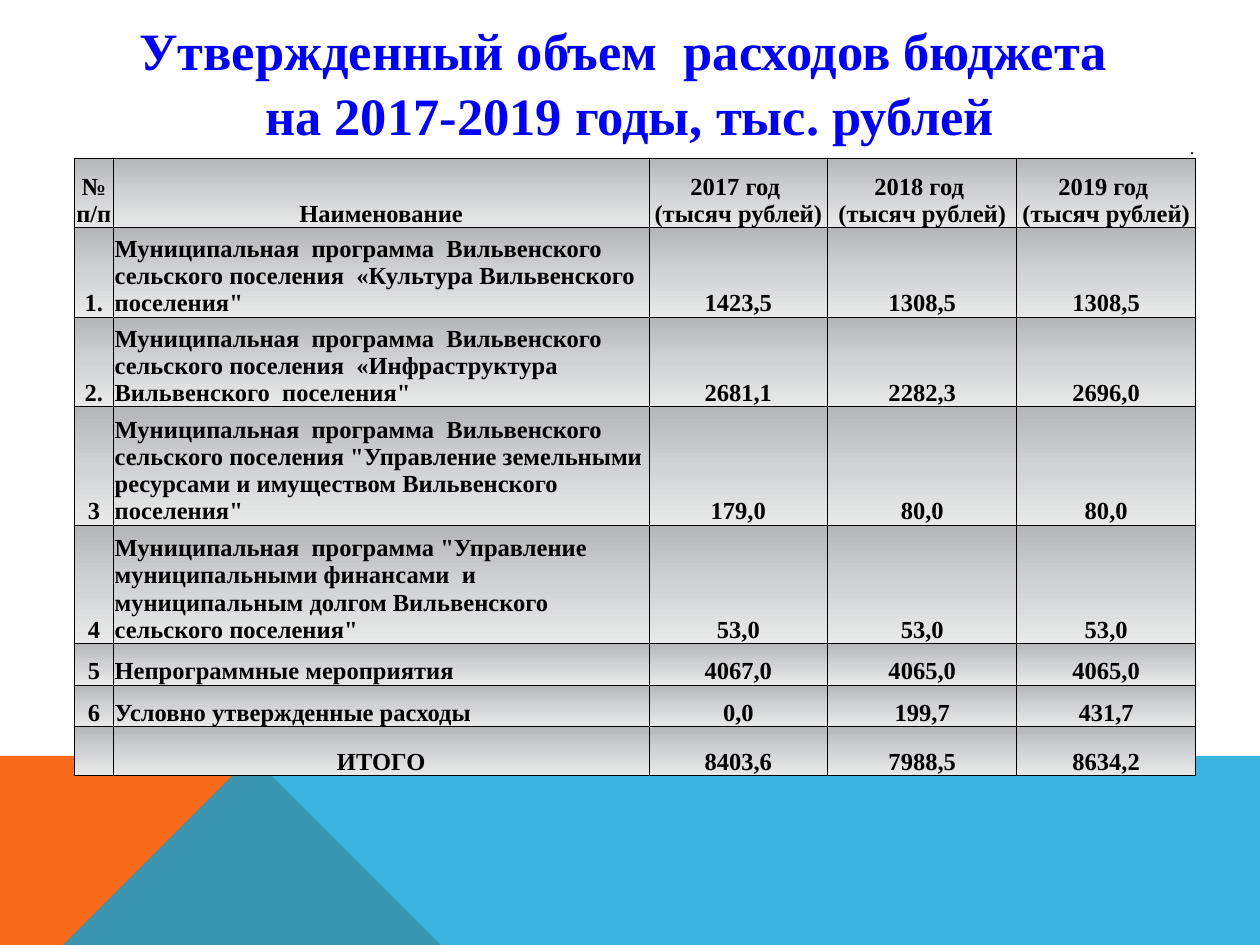
"""Builds the slide on approved budget spending for 2017-2019."""
from lxml.etree import SubElement
from pptx import Presentation
from pptx.dml.color import RGBColor
from pptx.enum.text import MSO_ANCHOR as Anchor, MSO_AUTO_SIZE as AutoSize, PP_ALIGN as Align
from pptx.oxml.ns import qn
from pptx.util import Inches, Pt

WIDTH, HEIGHT = 10, 7.5
FONT = "Times New Roman"
COLORS = {
    "title": "0000FF", "text": "000000", "border": "000000",
    "orange": "F96A1B", "blue": "08A1D9",
    "shade_top": "B5B6B8", "shade_middle": "D1D2D3", "shade_bottom": "E8E9E9",
}
NO_STYLE = "{2D5ABB26-0587-4C30-8999-92F81FD0307C}"
COLUMNS = [0.31, 4.25, 1.42, 1.5, 1.42]
ROWS = [0.17, 0.55, 0.71, 0.71, 0.94, 0.94, 0.33, 0.33, 0.39]
TITLE = "Утвержденный объем  расходов бюджета \nна 2017-2019 годы, тыс. рублей"
BUDGET = [
    ["", "", "", "", "."],
    ["№ п/п", "Наименование"] + [f"{year} год \n(тысяч рублей)" for year in (2017, 2018, 2019)],
    ["1.", "Муниципальная  программа  Вильвенского сельского поселения  "
     "«Культура Вильвенского  поселения\"", "1423,5", "1308,5", "1308,5"],
    ["2.", "Муниципальная  программа  Вильвенского сельского поселения  "
     "«Инфраструктура Вильвенского  поселения\"", "2681,1", "2282,3", "2696,0"],
    ["3", "Муниципальная  программа  Вильвенского сельского поселения "
     "\"Управление земельными ресурсами и имуществом Вильвенского  поселения\"",
     "179,0", "80,0", "80,0"],
    ["4", "Муниципальная  программа \"Управление муниципальными финансами  и "
     "муниципальным долгом Вильвенского сельского поселения\"", "53,0", "53,0", "53,0"],
    ["5", "Непрограммные мероприятия", "4067,0", "4065,0", "4065,0"],
    ["6", "Условно утвержденные расходы", "0,0", "199,7", "431,7"],
    ["", "ИТОГО", "8403,6", "7988,5", "8634,2"],
]


def write(paragraph, text, size=14, bold=True, color="text", align=Align.CENTER, spacing=None):
    """Put formatted text in a paragraph, with line feeds as line breaks."""
    paragraph.text = text
    paragraph.alignment = align
    if spacing:
        paragraph.line_spacing = spacing
    for run in paragraph.runs:
        run.font.name = FONT
        run.font.size = Pt(size)
        run.font.bold = bold
        run.font.color.rgb = RGBColor.from_string(COLORS[color])
    for line_break in paragraph._p.findall(qn("a:br")):
        SubElement(line_break, qn("a:rPr"), sz=str(int(size * 100)))
    if not text:
        SubElement(paragraph._p, qn("a:endParaRPr"), sz=str(int(size * 100)))


def add_band(slide, corners, color, opacity=100):
    """Draw a filled polygon from corners given in inches."""
    builder = slide.shapes.build_freeform(*corners[0], scale=Inches(1))
    builder.add_line_segments(corners[1:], close=True)
    band = builder.convert_to_shape()
    band.shadow.inherit = False
    band.line.fill.background()
    band.fill.solid()
    band.fill.fore_color.rgb = RGBColor.from_string(COLORS[color])
    if opacity < 100:
        tint = band._element.spPr.find(f"{qn('a:solidFill')}/{qn('a:srgbClr')}")
        SubElement(tint, qn("a:alpha"), val=str(opacity * 1000))


def add_border(properties, side):
    """Add a thin line to one side of a cell."""
    line = SubElement(properties, qn(f"a:ln{side}"), w=str(Pt(0.5)))
    fill = SubElement(line, qn("a:solidFill"))
    SubElement(fill, qn("a:srgbClr"), val=COLORS["border"])


def add_shade(properties):
    """Fill a cell with the vertical grey gradient."""
    gradient = SubElement(properties, qn("a:gradFill"), rotWithShape="1")
    stops = SubElement(gradient, qn("a:gsLst"))
    for position, shade in ((0, "shade_top"), (50, "shade_middle"), (100, "shade_bottom")):
        stop = SubElement(stops, qn("a:gs"), pos=str(position * 1000))
        SubElement(stop, qn("a:srgbClr"), val=COLORS[shade])
    SubElement(gradient, qn("a:lin"), ang="5400000", scaled="0")


def fill_cell(cell, text, row, column):
    """Write one budget cell and give it its borders and shade."""
    cell.margin_left = cell.margin_right = cell.margin_top = Inches(0.01)
    cell.margin_bottom = 0
    cell.vertical_anchor = Anchor.BOTTOM
    is_note = row == 0
    is_programme = column == 1 and 1 < row < len(BUDGET) - 1
    style = {"align": Align.LEFT if is_programme else Align.CENTER}
    if is_note:
        style = {"size": 10.5, "bold": False, "align": Align.RIGHT}
    elif text == "Наименование":
        style["spacing"] = 1.15
    for index, line in enumerate(text.split("\n")):
        frame = cell.text_frame
        write(frame.add_paragraph() if index else frame.paragraphs[0], line, **style)
    properties = cell._tc.get_or_add_tcPr()
    for side in "B" if is_note else "LRTB":
        add_border(properties, side)
    if is_note:
        cell.fill.background()
    else:
        add_shade(properties)


def add_budget(slide):
    """Add the budget table."""
    frame = slide.shapes.add_table(len(ROWS), len(COLUMNS), Inches(0.59), Inches(1.07),
                                   Inches(sum(COLUMNS)), Inches(sum(ROWS)))
    table = frame.table
    table.first_row = table.horz_banding = False
    table._tbl.tblPr.find(qn("a:tableStyleId")).text = NO_STYLE
    for column, width in zip(table.columns, COLUMNS):
        column.width = Inches(width)
    for row, height in zip(table.rows, ROWS):
        row.height = Inches(height)
    for row, texts in enumerate(BUDGET):
        for column, text in enumerate(texts):
            fill_cell(table.cell(row, column), text, row, column)


def add_title(slide):
    """Place the heading above the bands."""
    title = slide.shapes.title
    title.left, title.top = Inches(0.05 * WIDTH), Inches(0.13)
    title.width, title.height = Inches(0.9 * WIDTH), Inches(1.02)
    title.text_frame.auto_size = AutoSize.NONE
    title.text_frame.vertical_anchor = Anchor.MIDDLE
    write(title.text_frame.paragraphs[0], TITLE, size=30, color="title", spacing=1.04)
    slide.shapes._spTree.append(title._element)


def main():
    """Build and save the slide."""
    deck = Presentation()
    deck.slide_width, deck.slide_height = Inches(WIDTH), Inches(HEIGHT)
    slide = deck.slides.add_slide(deck.slide_layouts[5])
    horizon, peak = 5.52, 2.23
    add_band(slide, [(0, HEIGHT), (0, horizon), (peak, horizon), (3.91, HEIGHT)], "orange")
    add_band(slide, [(0, HEIGHT), (peak, horizon), (WIDTH, horizon), (WIDTH, HEIGHT)], "blue", 80)
    add_title(slide)
    add_budget(slide)
    deck.save("out.pptx")


if __name__ == "__main__":
    main()
